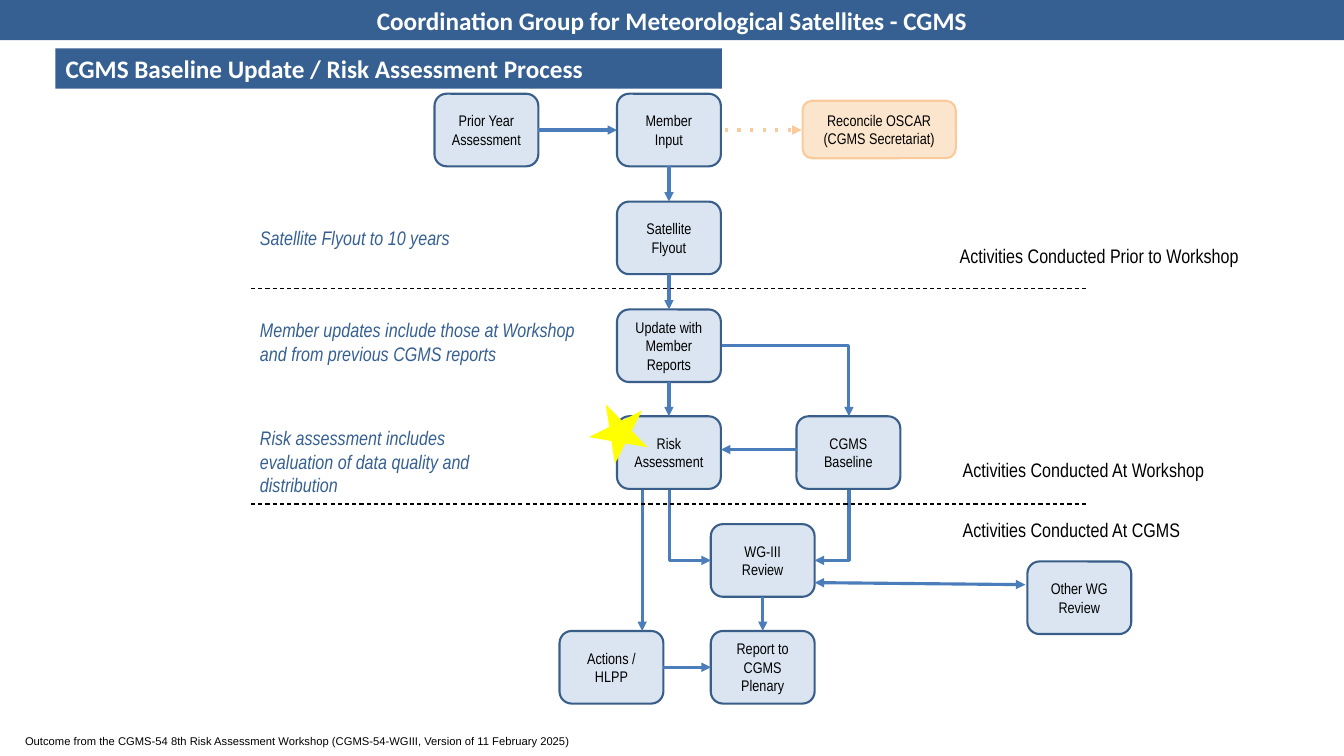
from lxml import etree
from pptx import Presentation
from pptx import util as u
from pptx.dml.color import RGBColor
from pptx.enum import shapes as es, text as et
from pptx.oxml.ns import qn

PX = 9144  # 100 px to the inch
NAVY = RGBColor(0x36, 0x60, 0x92)
EDGE = RGBColor(0x39, 0x5E, 0x89)
PALE = RGBColor(0xDA, 0xE5, 0xF1)
BLUE = RGBColor(0x4A, 0x7D, 0xBA)
PEACH = RGBColor(0xF9, 0xCB, 0x9C)
CREAM = RGBColor(0xFC, 0xE5, 0xCD)
YELLOW = RGBColor(0xFF, 0xFF, 0x00)
WHITE = RGBColor(0xFF, 0xFF, 0xFF)
BLACK = RGBColor(0, 0, 0)

HEAD = "Coordination Group for Meteorological Satellites - CGMS"
TITLE = "CGMS Baseline Update / Risk Assessment Process"
FOOT = "Outcome from the CGMS-54 8th Risk Assessment Workshop (CGMS-54-WGIII, Version of 11 February 2025)"

BOX_W, BOX_H = 103, 72
STEPS = {  # key: (left, top, text)
    "prior": (431, 93, "Prior Year Assessment"),
    "member": (612, 93, "Member\nInput"),
    "flyout": (612, 200, "Satellite Flyout"),
    "update": (612, 307, "Update with Member Reports"),
    "risk": (612, 413, "Risk Assessment"),
    "base": (790, 413, "CGMS Baseline"),
    "review": (705, 520, "WG-III Review"),
    "other": (1019, 557, "Other WG Review"),
    "actions": (555, 626, "Actions / HLPP"),
    "report": (705, 626, "Report to CGMS Plenary"),
}
OSCAR = (796, 100, 152, 57, "Reconcile OSCAR (CGMS Secretariat)")
STAR = (584, 398, 59, 57)

DOWN = [("member", "flyout"), ("flyout", "update"), ("update", "risk"), ("review", "report")]
ACROSS = [("prior", "member"), ("actions", "report")]
BENDS = [((664, 486), (705, 556)), ((842, 486), (808, 556))]

PHASES = [
    (942, 237, 298, 34, "Activities Conducted Prior to Workshop"),
    (945, 449, 267, 34, "Activities Conducted At Workshop"),
    (945, 509, 246, 34, "Activities Conducted At CGMS"),
]
NOTES = [
    (248, 219, 223, 34, "Satellite Flyout to 10 years"),
    (248, 311, 338, 57, "Member updates include those at Workshop and from previous CGMS reports"),
    (248, 418, 231, 81, "Risk assessment includes evaluation of data quality and distribution"),
]

deck = Presentation()
deck.slide_width, deck.slide_height = 1333 * PX, 750 * PX
slide = deck.slides.add_slide(deck.slide_layouts[5])
parts = slide.shapes


def write(shape, words, size, font, color, align=et.PP_ALIGN.LEFT,
          anchor=et.MSO_ANCHOR.MIDDLE, side=10, bold=False, italic=False):
    frame = shape.text_frame
    frame.text = words
    frame.word_wrap = True
    frame.auto_size = et.MSO_AUTO_SIZE.NONE
    frame.vertical_anchor = anchor
    frame.margin_left = frame.margin_right = side * PX
    frame.margin_top = frame.margin_bottom = 5 * PX
    for para in frame.paragraphs:
        para.alignment = align
        for run in para.runs:
            run.font.size, run.font.name = u.Pt(size), font
            run.font.bold, run.font.italic = bold, italic
            run.font.color.rgb = color


def draw(kind, at, fill, edge=None):
    shape = parts.add_shape(kind, *(n * PX for n in at))
    shape.shadow.inherit = False
    shape.fill.solid()
    shape.fill.fore_color.rgb = fill
    if edge is None:
        shape.line.fill.background()
    else:
        shape.line.color.rgb = edge
        shape.line.width = u.Pt(1.5)
    return shape


def step(at, words, fill=PALE, edge=EDGE, side=12):
    box = draw(es.MSO_SHAPE.ROUNDED_RECTANGLE, at, fill, edge)
    write(box, words, 11, "Arial Narrow", BLACK, et.PP_ALIGN.CENTER, side=side)
    return box


def label(at, words, size, font, color, italic=False):
    box = parts.add_textbox(*(n * PX for n in at))
    write(box, words, size, font, color, anchor=et.MSO_ANCHOR.TOP, italic=italic)


def link(start, end, color=BLUE, width=2.25, dash=None, tips=("tailEnd",)):
    line = parts.add_connector(es.MSO_CONNECTOR.STRAIGHT, *(round(n * PX) for n in (*start, *end)))
    line.line.color.rgb = color
    line.line.width = u.Pt(width)
    props = line._element.spPr
    ln = props.find(qn("a:ln"))
    if dash:
        etree.SubElement(ln, qn("a:prstDash"), val=dash)
    for tip in tips:
        etree.SubElement(ln, qn("a:" + tip), type="triangle")
    etree.SubElement(props, qn("a:effectLst"))
    return line


def bend(start, end, turn=0):
    """Draw a one-corner arrow; turn is its rotation in degrees."""
    line = link(start, end)
    props = line._element.spPr
    props.find(qn("a:prstGeom")).set("prst", "bentConnector2")
    if turn:
        props.find(qn("a:xfrm")).set("rot", str(turn * 60000))


def drop(start, end):
    """Draw an arrow that runs down, then sideways: a bend turned about its centre."""
    (x1, y1), (x2, y2) = start, end
    midx, midy = (x1 + x2) / 2, (y1 + y2) / 2
    halfw, halfh = (y2 - y1) / 2, abs(x2 - x1) / 2
    right = x2 > x1
    if right:
        halfw = -halfw
    bend((midx - halfw, midy - halfh), (midx + halfw, midy + halfh), 270 if right else 90)


def join(pair, sites):
    line = link((0, 0), (1, 1))
    line.begin_connect(boxes[pair[0]], sites[0])
    line.end_connect(boxes[pair[1]], sites[1])


label((15, 724, 614, 24), FOOT, 8, "Arial", BLACK)
band = draw(es.MSO_SHAPE.RECTANGLE, (0, 0, 1333, 40), NAVY)
write(band, HEAD, 18, "Calibri", WHITE, et.PP_ALIGN.CENTER, bold=True)

title = parts.title
title.left, title.top, title.width, title.height = (n * PX for n in (55, 48, 661, 40))
title.fill.solid()
title.fill.fore_color.rgb = NAVY
write(title, TITLE, 18, "Calibri", WHITE, bold=True)

boxes = {key: step((x, y, BOX_W, BOX_H), words) for key, (x, y, words) in STEPS.items()}
step(OSCAR[:4], OSCAR[4], CREAM, PEACH, side=8)

for pair in DOWN:
    join(pair, (2, 0))
for pair in ACROSS:
    join(pair, (3, 1))
link((790, 446), (715, 446))
link((637, 486), (637, 626))
link((808, 578), (1017, 580), tips=("headEnd", "tailEnd"))
link((719, 129), (795, 129), PEACH, dash="dot")
bend((716, 343), (842, 413))
for start, end in BENDS:
    drop(start, end)
for y in (286, 500):
    link((249, y), (1078, y), BLACK, 0.75, "dash", ())

for *at, words in PHASES:
    label(at, words, 14, "Arial Narrow", BLACK)
for *at, words in NOTES:
    label(at, words, 14, "Arial Narrow", NAVY, italic=True)

star = draw(es.MSO_SHAPE.STAR_5_POINT, STAR, YELLOW)
star.rotation = 333.4

deck.save("out.pptx")
